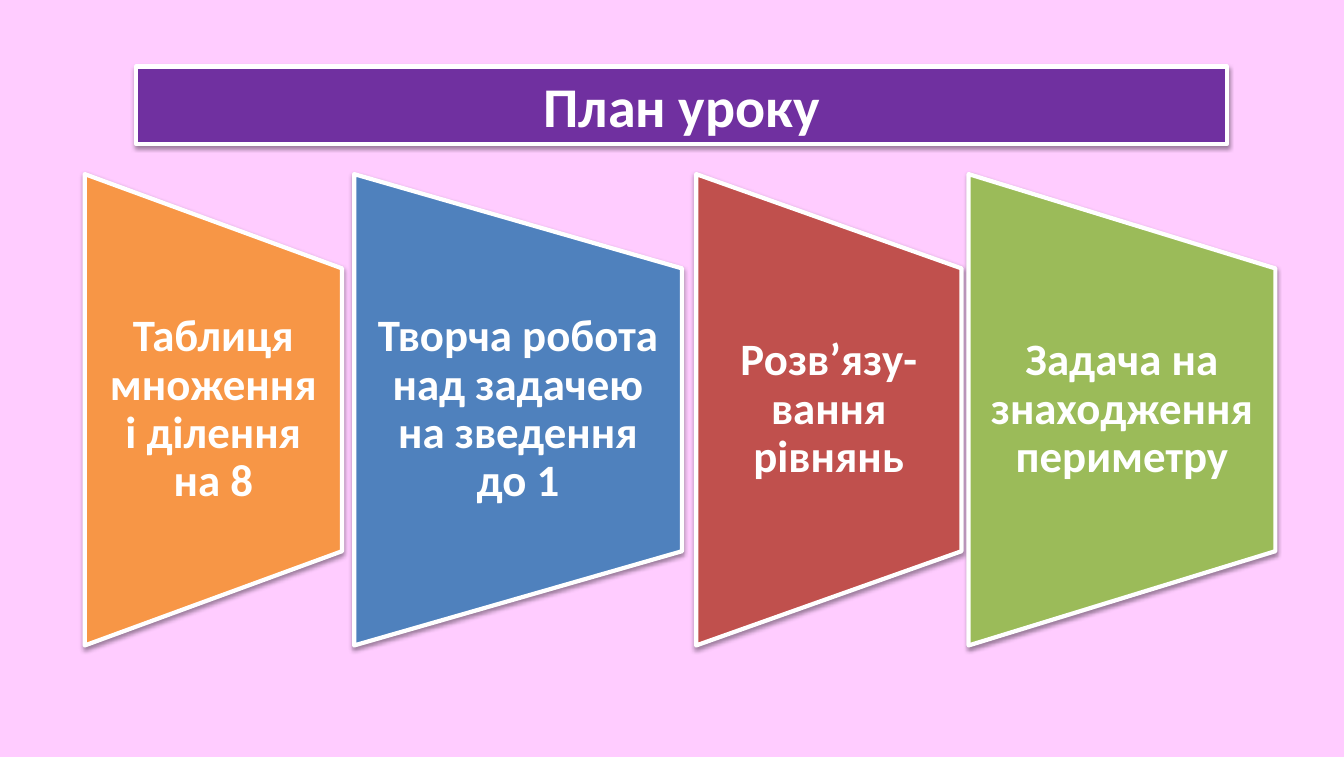
from lxml import etree
from pptx import Presentation
from pptx.dml.color import RGBColor
from pptx.enum.shapes import MSO_SHAPE as SHAPE
from pptx.enum.text import MSO_ANCHOR as ANCHOR, PP_ALIGN as ALIGN
from pptx.oxml import parse_xml
from pptx.oxml.ns import nsdecls
from pptx.util import Inches, Pt

PINK = RGBColor(0xFF, 0xCC, 0xFF)
PURPLE = RGBColor(0x70, 0x30, 0xA0)
ORANGE = RGBColor(0xF7, 0x96, 0x46)
BLUE = RGBColor(0x4F, 0x81, 0xBD)
RED = RGBColor(0xC0, 0x50, 0x4D)
GREEN = RGBColor(0x9B, 0xBB, 0x59)
WHITE = RGBColor(0xFF, 0xFF, 0xFF)

SHADOW = (
    f'<a:effectLst {nsdecls("a")}>'
    '<a:outerShdw blurRad="40000" dist="20000" dir="5400000" rotWithShape="0">'
    '<a:srgbClr val="000000"><a:alpha val="38000"/></a:srgbClr>'
    '</a:outerShdw></a:effectLst>'
)


def add_block(kind, left, top, width, height, color):
    sp = s.shapes.add_shape(kind, Inches(left), Inches(top), Inches(width), Inches(height))
    sp.fill.solid()
    sp.fill.fore_color.rgb = color
    sp.line.color.rgb = WHITE
    sp.line.width = Pt(3)
    sp._element.spPr.append(parse_xml(SHADOW))
    return sp


def write(sp, text, size):
    tf = sp.text_frame
    tf.word_wrap = True
    p = tf.paragraphs[0]
    p.text = text
    p.alignment = ALIGN.CENTER
    p.font.name = "Calibri"
    p.font.size = Pt(size)
    p.font.bold = True
    p.font.color.rgb = WHITE
    return tf


prs = Presentation()
prs.slide_width, prs.slide_height = Inches(13.32), Inches(7.5)
s = prs.slides.add_slide(prs.slide_layouts[6])
s.background.fill.solid()
s.background.fill.fore_color.rgb = PINK

# Title bar
write(add_block(SHAPE.RECTANGLE, 1.35, 0.66, 10.81, 0.77, PURPLE), "План уроку", 40)

# Lesson stages: trapezoids turned on their side, with level text on top
stages = [
    (0.84, 2.55, ORANGE, "Таблиця множення і ділення на 8"),
    (3.51, 3.25, BLUE, "Творча робота над задачею на зведення до 1"),
    (6.9, 2.63, RED, "Розв’язу-вання рівнянь"),
    (9.6, 3.04, GREEN, "Задача на знаходження периметру"),
]
STAGE_H, TEXT_H, MIDDLE = 4.67, 2.8, 4.06

for left, width, color, text in stages:
    sp = add_block(SHAPE.FLOWCHART_MANUAL_OPERATION, left + (width - STAGE_H) / 2,
                   MIDDLE - width / 2, STAGE_H, width, color)
    sp.rotation = 270
    box = s.shapes.add_textbox(Inches(left), Inches(MIDDLE - TEXT_H / 2),
                               Inches(width), Inches(TEXT_H))
    tf = write(box, text, 32)
    tf.vertical_anchor = ANCHOR.MIDDLE
    tf.margin_left = tf.margin_right = Inches(0.22)
    tf.margin_top = tf.margin_bottom = 0
    tf.paragraphs[0].line_spacing = 0.9

prs.save("out.pptx")
